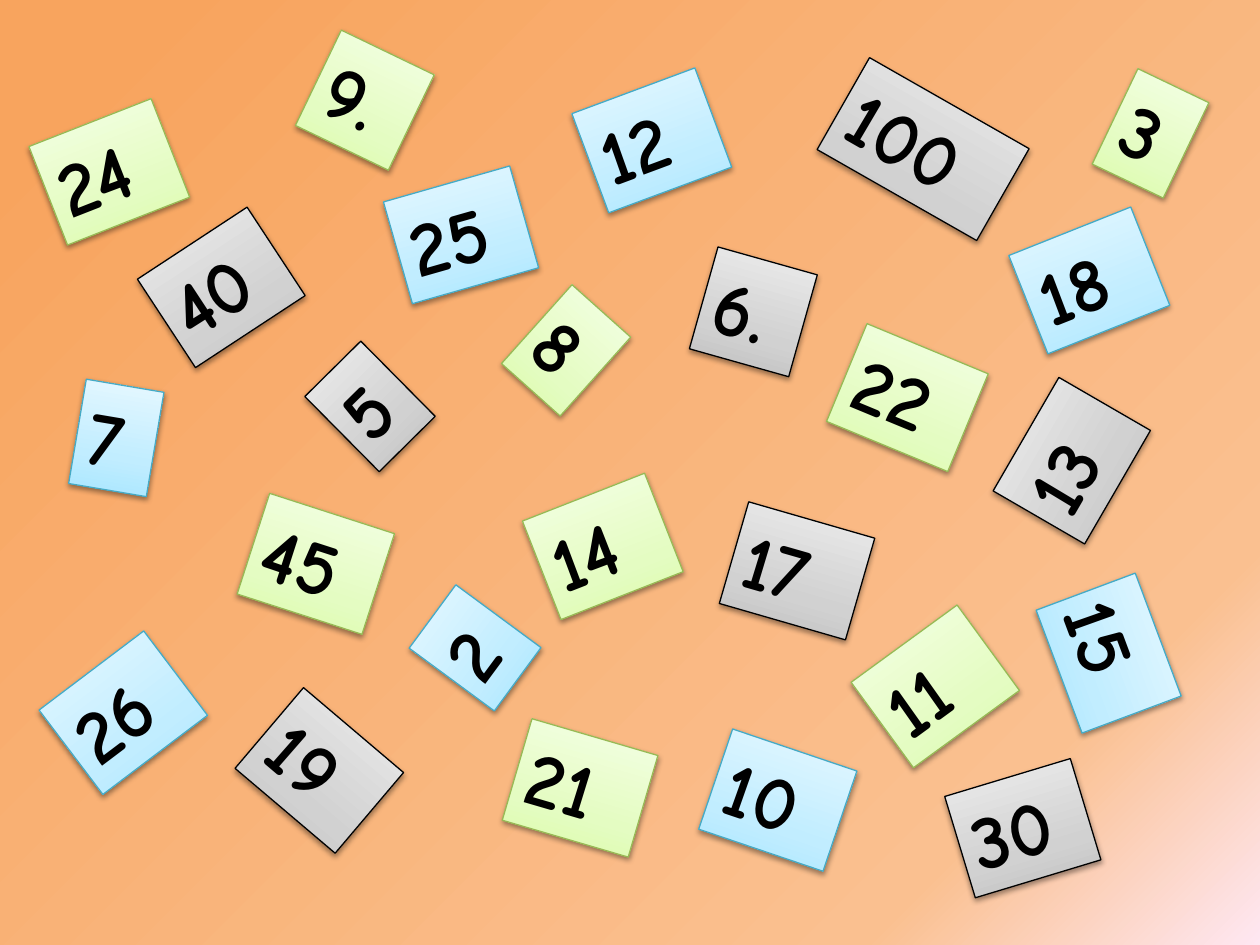
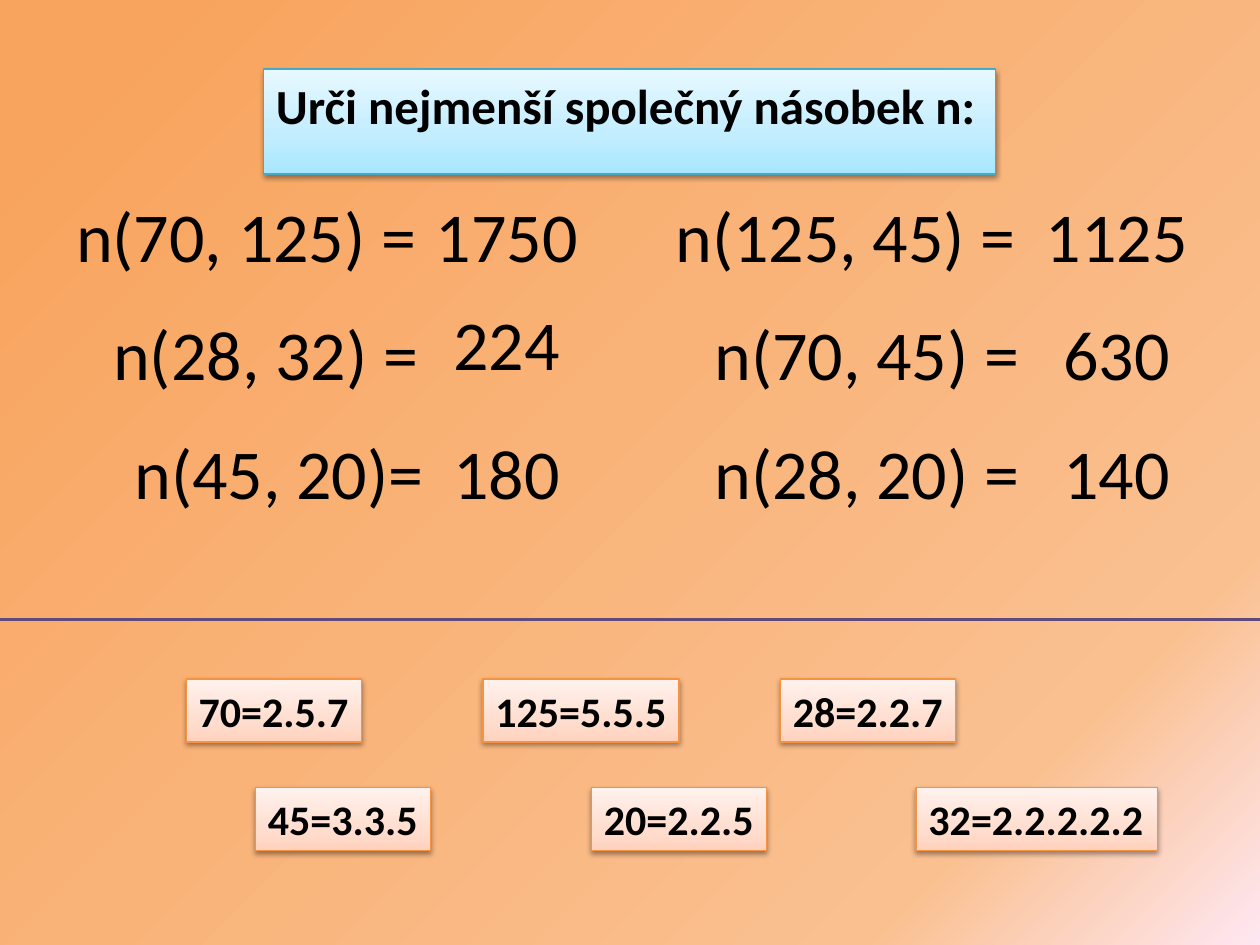
from dataclasses import dataclass

from lxml import etree
from pptx import Presentation
from pptx.dml.color import RGBColor
from pptx.enum.shapes import MSO_CONNECTOR, MSO_SHAPE
from pptx.enum.text import MSO_ANCHOR, MSO_AUTO_SIZE, PP_ALIGN
from pptx.oxml.ns import qn
from pptx.util import Pt

RECT = MSO_SHAPE.RECTANGLE
LINE = MSO_CONNECTOR.STRAIGHT
TOP = MSO_ANCHOR.TOP
GROW = MSO_AUTO_SIZE.SHAPE_TO_FIT_TEXT
LEFT, RIGHT = PP_ALIGN.LEFT, PP_ALIGN.RIGHT

WIDE, HIGH = 720, 540
TITLE_ONLY, BLANK = 5, 6
SANS, COMIC = "Calibri", "Comic Neue"
COLORS = {
    "ink": "000000", "rule": "604A7B",
    "green": "98B955", "blue": "46AAC5", "grey": "000000", "peach": "F69240",
}
# Gradient stops: percent along, colour, percent opaque
BACK = [(7, "F8A45E", 100), (82, "FAC090", 73), (100, "FEE7F2", 100)]
TINTS = {
    "green": ("DAFDA7", "E4FCC2", "F5FFE7"),
    "blue": ("A7E6FF", "C1EDFF", "E7F8FF"),
    "grey": ("BDBDBD", "D1D1D1", "EEEEEE"),
    "peach": ("FFD2BD", "FFDED0", "FFF2ED"),
}


@dataclass
class Card:
    text: str
    left: float
    top: float
    turn: float
    tint: str

    @property
    def width(self) -> float:
        dots = self.text.count(".")
        return 15 + 30 * (len(self.text) - dots) + 14 * dots


@dataclass
class Task:
    text: str
    left: float
    width: float
    answer: str
    lift: float = 0


@dataclass
class Tag:
    text: str
    left: float
    width: float


CARDS = [
    Card("9.", 179, 27, 25.7, "green"),
    Card("2", 249, 340, 306.4, "blue"),
    Card("22", 481, 197, 22.5, "green"),
    Card("15", 596, 343, 69.5, "blue"),
    Card("45", 143, 292, 17.9, "green"),
    Card("17", 418, 296, 16.1, "grey"),
    Card("3", 635, 46, 25.6, "green"),
    Card("6.", 401, 148, 15.7, "grey"),
    Card("7", 44, 220, 9.6, "blue"),
    Card("14", 307, 282, 338.6, "green"),
    Card("12", 335, 50, 339.6, "blue"),
    Card("8", 301, 170, 41.8, "green"),
    Card("11", 497, 362, 323.9, "green"),
    Card("5", 189, 202, 315.3, "grey"),
    Card("10", 407, 427, 18.7, "blue"),
    Card("13", 575, 233, 300.1, "grey"),
    Card("26", 33, 377, 322.9, "blue"),
    Card("25", 226, 104, 344.1, "blue"),
    Card("100", 475, 55, 29.7, "grey"),
    Card("40", 89, 134, 326.7, "grey"),
    Card("19", 145, 410, 40.3, "grey"),
    Card("18", 585, 130, 338.3, "blue"),
    Card("30", 547, 443, 343.2, "grey"),
    Card("21", 294, 420, 16.3, "green"),
    Card("24", 25, 68, 338.6, "green"),
]
# Centre of each answer column, with the tasks beside it
TASKS = {
    290: [
        Task("n(70, 125) =", 34, 211, "1750"),
        Task("n(28, 32) =", 56, 190, "224", lift=6),
        Task("n(45, 20)=", 68, 181, "180"),
    ],
    638.5: [
        Task("n(125, 45) =", 376.5, 211, "1125"),
        Task("n(70, 45) =", 399.5, 190, "630"),
        Task("n(28, 20) =", 399.5, 190, "140"),
    ],
}
# Top of each row of factor tags
TAGS = {
    388: [Tag("70=2.5.7", 106.5, 100), Tag("125=5.5.5", 276, 112),
          Tag("28=2.2.7", 446, 100)],
    450: [Tag("45=3.3.5", 146, 100), Tag("20=2.2.5", 338, 100),
          Tag("32=2.2.2.2.2", 523.5, 138)],
}


def blend(fill, host, stops: list, angle: float) -> None:
    """Give a fill a gradient; the angle runs anticlockwise."""
    fill.gradient()
    fill.gradient_angle = angle
    steps = host.find(".//" + qn("a:gsLst"))
    for old in list(steps):
        steps.remove(old)
    for place, color, alpha in stops:
        stop = etree.SubElement(steps, qn("a:gs"), pos=str(place * 1000))
        tone = etree.SubElement(stop, qn("a:srgbClr"), val=color)
        if alpha < 100:
            etree.SubElement(tone, qn("a:alpha"), val=str(alpha * 1000))


def place(shape, left: float, top: float, width: float, height: float) -> None:
    shape.left, shape.top = Pt(left), Pt(top)
    shape.width, shape.height = Pt(width), Pt(height)


def paint(shape, tint: str) -> None:
    """Apply the shaded fill, thin edge and soft shadow of a tint."""
    stops = [(at, color, 100) for at, color in zip((0, 35, 100), TINTS[tint])]
    blend(shape.fill, shape.element.spPr, stops, 90)
    shape.line.color.rgb = RGBColor.from_string(COLORS[tint])
    shape.line.width = Pt(0.75)
    shape.shadow.inherit = False
    glow = etree.SubElement(
        shape.element.spPr.find(qn("a:effectLst")), qn("a:outerShdw"),
        blurRad="40000", dist="20000", dir="5400000", rotWithShape="0")
    tone = etree.SubElement(glow, qn("a:srgbClr"), val=COLORS["ink"])
    etree.SubElement(tone, qn("a:alpha"), val="38000")


def write(shape, text: str, size: float, font: str = SANS,
          bold: bool = False, align=LEFT) -> None:
    frame = shape.text_frame
    frame.word_wrap = False
    frame.auto_size = GROW
    frame.vertical_anchor = TOP
    para = frame.paragraphs[0]
    para.alignment = align
    run = para.add_run()
    run.text = text
    run.font.name = font
    run.font.size = Pt(size)
    run.font.bold = bold
    run.font.color.rgb = RGBColor.from_string(COLORS["ink"])


def add_panel(slide, left: float, top: float, width: float, height: float,
              tint: str):
    panel = slide.shapes.add_shape(
        RECT, Pt(left), Pt(top), Pt(width), Pt(height))
    paint(panel, tint)
    return panel


def add_sum(slide, text: str, left: float, top: float, width: float,
            align) -> None:
    box = slide.shapes.add_textbox(Pt(left), Pt(top), Pt(width), Pt(55.5))
    write(box, text, 40, align=align)


def draw_cards(deck) -> None:
    slide = deck.slides.add_slide(deck.slide_layouts[BLANK])
    for card in CARDS:
        panel = add_panel(
            slide, card.left, card.top, card.width, 60.5, card.tint)
        panel.rotation = card.turn
        write(panel, card.text, 44, COMIC, bold=True)


def draw_tasks(deck) -> None:
    slide = deck.slides.add_slide(deck.slide_layouts[TITLE_ONLY])
    title = slide.shapes.title
    place(title, 150.5, 39.5, 418.5, 41)
    paint(title, "blue")
    write(title, "Urči nejmenší společný násobek n:", 28, bold=True)

    for mid, tasks in TASKS.items():
        for row, task in enumerate(tasks):
            top = 106.5 + 67.7 * row
            add_sum(slide, task.text, task.left, top, task.width, RIGHT)
            width = 15 + 20.25 * len(task.answer)
            add_sum(slide, task.answer, mid - width / 2, top - task.lift,
                    width, LEFT)

    for top, tags in TAGS.items():
        for tag in tags:
            panel = add_panel(slide, tag.left, top, tag.width, 36, "peach")
            write(panel, tag.text, 24, bold=True)

    rule = slide.shapes.add_connector(LINE, 0, Pt(354), Pt(WIDE), Pt(354))
    rule.line.color.rgb = RGBColor.from_string(COLORS["rule"])
    rule.line.width = Pt(1.75)
    etree.SubElement(rule.element.spPr, qn("a:effectLst"))


def main() -> None:
    deck = Presentation()
    deck.slide_width, deck.slide_height = Pt(WIDE), Pt(HIGH)
    master = deck.slide_master
    blend(master.background.fill, master.element, BACK, 315)
    draw_cards(deck)
    draw_tasks(deck)
    deck.save("out.pptx")


if __name__ == "__main__":
    main()
